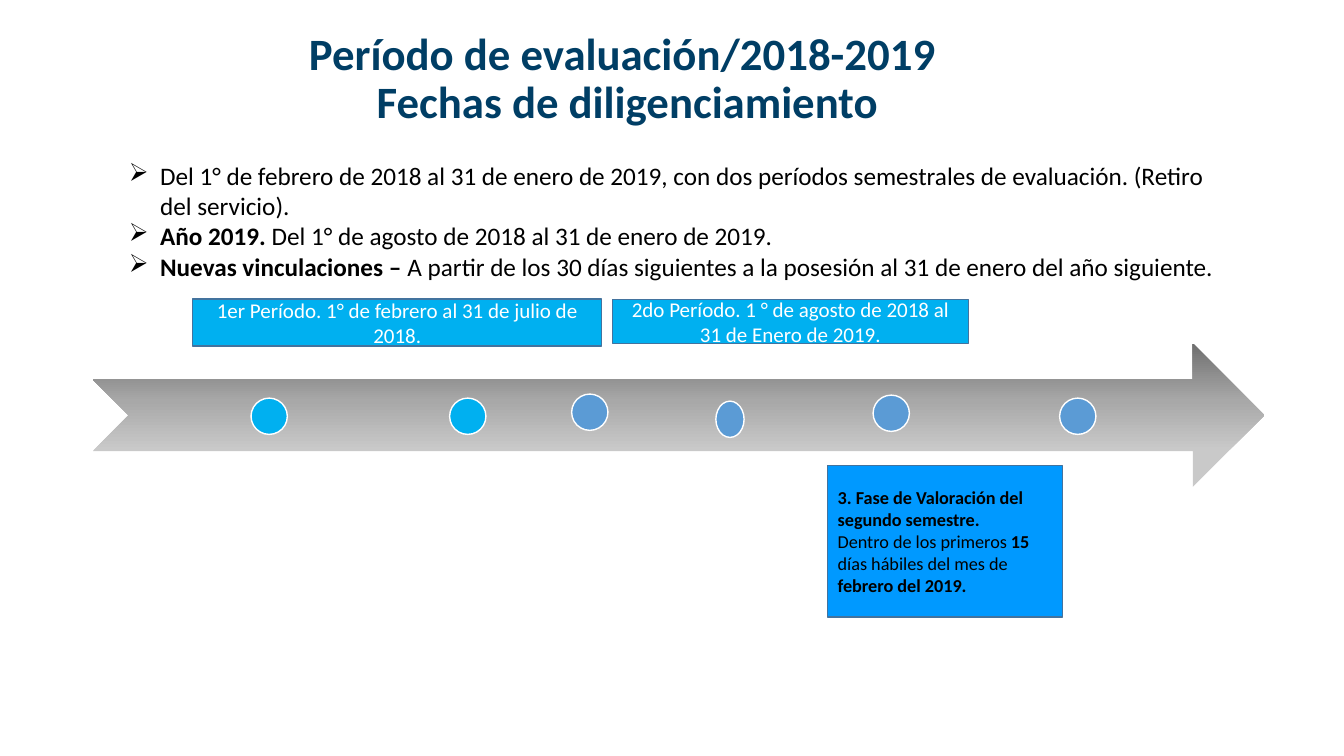
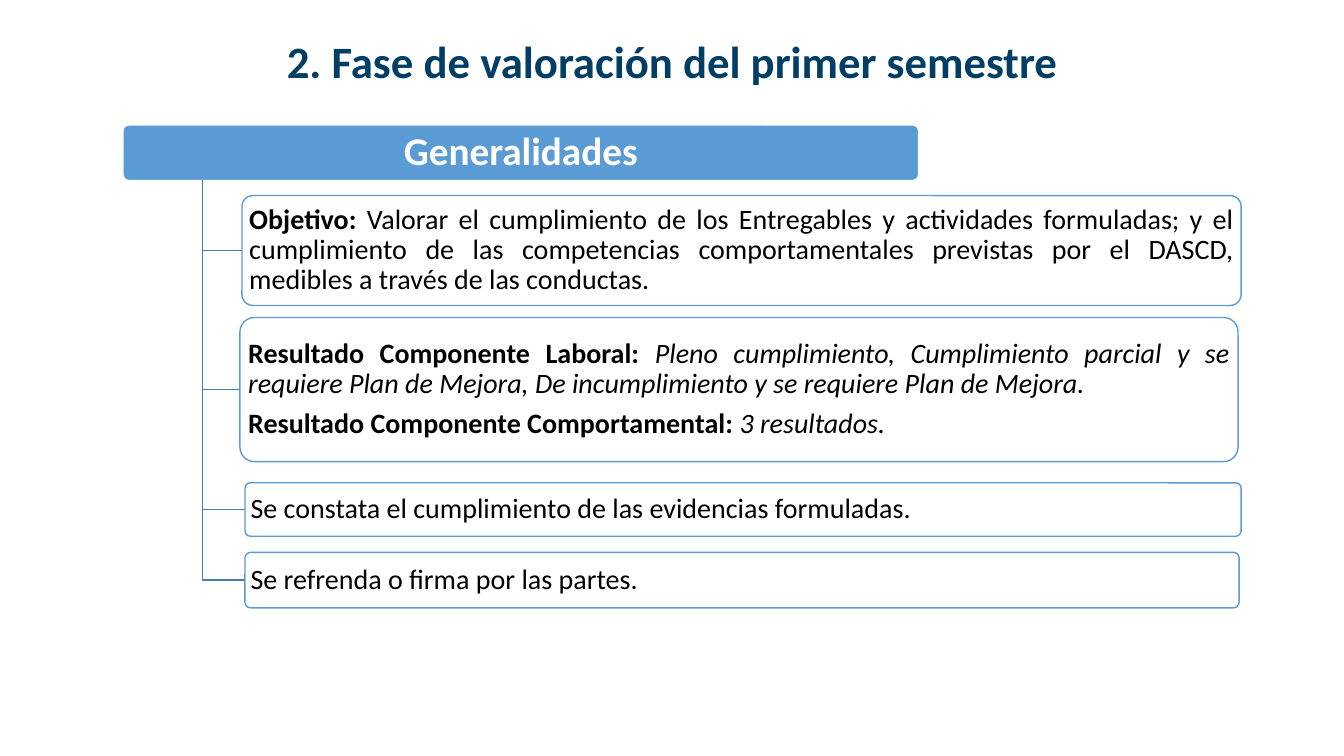
from dataclasses import dataclass

from lxml import etree
from pptx import Presentation
from pptx.dml.color import RGBColor
from pptx.enum.shapes import MSO_SHAPE
from pptx.enum.text import MSO_ANCHOR, MSO_AUTO_SIZE, PP_ALIGN
from pptx.oxml.ns import qn
from pptx.util import Inches, Pt

LEFT, CENTER, JUSTIFY = PP_ALIGN.LEFT, PP_ALIGN.CENTER, PP_ALIGN.JUSTIFY
TOP, MIDDLE = MSO_ANCHOR.TOP, MSO_ANCHOR.MIDDLE
RECTANGLE, ROUNDED = MSO_SHAPE.RECTANGLE, MSO_SHAPE.ROUNDED_RECTANGLE
OVAL, BAR = MSO_SHAPE.OVAL, MSO_SHAPE.MATH_MINUS
ARROW = MSO_SHAPE.NOTCHED_RIGHT_ARROW
NO_AUTOFIT = MSO_AUTO_SIZE.NONE


@dataclass(frozen=True)
class Theme:
    font: str = "Calibri"
    navy: str = "003E65"
    black: str = "000000"
    white: str = "FFFFFF"
    cyan: str = "00B0F0"
    blue: str = "5B9BD5"
    bright: str = "0099FF"
    outline: str = "43739E"
    branch: str = "497CAB"
    arrow_stops: tuple = ((4, "C9C9C9"), (26, "C9C9C9"), (60, "A8A8A8"), (100, "6F6F6F"))
    title_size: int = 32
    heading_size: int = 28
    item_size: int = 20
    body_size: int = 18
    period_size: int = 15
    note_size: int = 13


THEME = Theme()


def rgb(colour):
    return RGBColor.from_string(colour)


def add_bullet(paragraph, character, indent):
    properties = paragraph._p.get_or_add_pPr()
    properties.set("marL", str(Inches(indent)))
    properties.set("indent", str(-Inches(indent)))
    etree.SubElement(properties, qn("a:buChar")).set("char", character)


def write_text(frame, paragraphs, size, colour=THEME.black, align=LEFT, anchor=MIDDLE,
               spacing=None, gap=0, insets=(0.1, 0.05), bullet=None):
    """Each paragraph is a list of (text, style); style holds b for bold, i for italic."""
    frame.word_wrap = True
    frame.auto_size = NO_AUTOFIT
    frame.vertical_anchor = anchor
    frame.margin_left = frame.margin_right = Inches(insets[0])
    frame.margin_top = frame.margin_bottom = Inches(insets[1])
    for index, runs in enumerate(paragraphs):
        paragraph = frame.add_paragraph() if index else frame.paragraphs[0]
        paragraph.alignment = align
        if spacing:
            paragraph.line_spacing = spacing
        if index and gap:
            paragraph.space_before = Pt(gap)
        if bullet:
            add_bullet(paragraph, bullet, indent=0.31)
        for text, style in runs:
            for line_number, line in enumerate(text.split("\n")):
                if line_number:
                    paragraph.add_line_break()
                run = paragraph.add_run()
                run.text = line
                run.font.name = THEME.font
                run.font.size = Pt(size)
                run.font.color.rgb = rgb(colour)
                run.font.bold = "b" in style
                run.font.italic = "i" in style


class Deck:
    def __init__(self):
        self.presentation = Presentation()
        self.presentation.slide_width = Inches(13.33)
        self.presentation.slide_height = Inches(7.5)
        self.slide = None

    def add_slide(self, title, box):
        layout = self.presentation.slide_layouts[5]
        self.slide = self.presentation.slides.add_slide(layout)
        placeholder = self.slide.shapes.title
        placeholder.left, placeholder.top, placeholder.width, placeholder.height = map(Inches, box)
        write_text(placeholder.text_frame, [[(title, "b")]], size=THEME.title_size,
                   colour=THEME.navy, align=CENTER, spacing=0.9)

    def add_text(self, box, paragraphs, **text_format):
        shape = self.slide.shapes.add_textbox(*map(Inches, box))
        write_text(shape.text_frame, paragraphs, **text_format)

    def add_shape(self, kind, box, fill, line=None, adjustment=None):
        shape = self.slide.shapes.add_shape(kind, *map(Inches, box))
        shape.shadow.inherit = False
        shape.fill.solid()
        shape.fill.fore_color.rgb = rgb(fill)
        if line:
            shape.line.color.rgb = rgb(line)
            shape.line.width = Pt(1)
        else:
            shape.line.fill.background()
        if adjustment is not None:
            shape.adjustments[0] = adjustment
        return shape

    def add_gradient_arrow(self, box, stops):
        shape = self.add_shape(ARROW, box, stops[0][1])
        shape.fill.gradient()
        shape.fill.gradient_angle = 90
        stop_list = shape._element.spPr.find(qn("a:gradFill")).find(qn("a:gsLst"))
        for stop in list(stop_list):
            stop_list.remove(stop)
        for percent, colour in stops:
            stop = etree.SubElement(stop_list, qn("a:gs"), pos=str(percent * 1000))
            etree.SubElement(stop, qn("a:srgbClr"), val=colour)

    def add_branch(self, start, end):
        (left, top), (right, bottom) = start, end
        builder = self.slide.shapes.build_freeform(Inches(left), Inches(top))
        corners = [(Inches(left), Inches(bottom)), (Inches(right), Inches(bottom))]
        builder.add_line_segments(corners, close=False)
        shape = builder.convert_to_shape()
        shape.shadow.inherit = False
        shape.fill.background()
        shape.line.color.rgb = rgb(THEME.branch)
        shape.line.width = Pt(1)


def add_timeline_slide(deck):
    deck.add_slide("Período de evaluación/2018-2019 \nFechas de diligenciamiento",
                   (0.8, 0.2, 10.85, 1.19))

    # Timeline arrow and its milestones
    deck.add_gradient_arrow((0.92, 3.41, 11.62, 1.42), THEME.arrow_stops)
    milestones = [
        (2.49, 3.95, 0.36, THEME.cyan),
        (4.46, 3.95, 0.36, THEME.cyan),
        (5.67, 3.91, 0.36, THEME.blue),
        (7.1, 3.98, 0.28, THEME.blue),
        (8.66, 3.92, 0.36, THEME.blue),
        (10.51, 3.95, 0.36, THEME.blue),
    ]
    for left, top, width, colour in milestones:
        deck.add_shape(OVAL, (left, top, width, 0.36), colour, THEME.white)

    # Evaluation periods
    periods = [
        ((5.44, 2.43, 4.8, 1.52), 0.29, "2do Período. 1 ° de agosto de 2018 al 31 de Enero de 2019."),
        ((1.18, 2.23, 5.52, 1.94), 0.24, "1er Período. 1° de febrero al 31 de julio de 2018."),
    ]
    for box, thickness, text in periods:
        bar = deck.add_shape(BAR, box, THEME.cyan, THEME.outline, thickness)
        write_text(bar.text_frame, [[(text, "")]], size=THEME.period_size,
                   colour=THEME.white, align=CENTER)

    # Dates
    deck.add_text((1.18, 1.54, 10.98, 1.31), [
        [("Del 1° de febrero de 2018 al 31 de enero de 2019, con dos períodos semestrales "
          "de evaluación. (Retiro del servicio).", "")],
        [("Año 2019. ", "b"), ("Del 1° de agosto de 2018 al 31 de enero de 2019.", "")],
        [("Nuevas vinculaciones – ", "b"),
         ("A partir de los 30 días siguientes a la posesión al 31 de enero del año siguiente.", "")],
    ], size=THEME.body_size, anchor=TOP, bullet="➢")

    # Third phase note
    note = deck.add_shape(RECTANGLE, (8.21, 4.62, 2.33, 1.5), THEME.bright, THEME.outline)
    write_text(note.text_frame, [
        [("3. Fase de Valoración del segundo semestre.", "b")],
        [("Dentro de los primeros ", ""), ("15 ", "b"),
         ("días hábiles del mes de ", ""), ("febrero del 2019.", "b")],
    ], size=THEME.note_size)


def add_phase_slide(deck):
    deck.add_slide("2. Fase de valoración del primer semestre", (0.92, 0.28, 11.5, 0.7))

    # Heading of the hierarchy
    heading = deck.add_shape(ROUNDED, (1.22, 1.24, 7.89, 0.55), THEME.blue, THEME.white, 0.1)
    write_text(heading.text_frame, [[("Generalidades", "b")]], size=THEME.heading_size,
               colour=THEME.white, align=CENTER, spacing=0.9, insets=(0.06, 0.04))

    # Items, each joined to the heading by a branch
    items = [
        ((2.4, 1.94, 9.91, 1.09), [
            [("Objetivo: ", "b"),
             ("Valorar el cumplimiento de los Entregables y actividades formuladas; y el "
              "cumplimiento de las competencias comportamentales previstas por el DASCD, "
              "medibles a través de las conductas.", "")]]),
        ((2.38, 3.15, 9.9, 1.43), [
            [("Resultado Componente Laboral: ", "b"),
             ("Pleno cumplimiento, Cumplimiento parcial y se requiere Plan de Mejora, "
              "De incumplimiento y se requiere Plan de Mejora.", "i")],
            [("Resultado Componente Comportamental: ", "b"), ("3 resultados.", "i")]]),
        ((2.43, 4.79, 9.88, 0.53), [
            [("Se constata el cumplimiento de las evidencias formuladas.", "")]]),
        ((2.43, 5.48, 9.86, 0.55), [
            [("Se refrenda o firma por las partes.", "")]]),
    ]
    for box, paragraphs in items:
        left, top, _, height = box
        deck.add_branch((2.01, 1.79), (left, top + height / 2))
        item = deck.add_shape(ROUNDED, box, THEME.white, THEME.blue, 0.1)
        write_text(item.text_frame, paragraphs, size=THEME.item_size, align=JUSTIFY,
                   spacing=0.9, gap=7, insets=(0.04, 0.03))


def main():
    deck = Deck()
    add_timeline_slide(deck)
    add_phase_slide(deck)
    deck.presentation.save("out.pptx")


if __name__ == "__main__":
    main()
